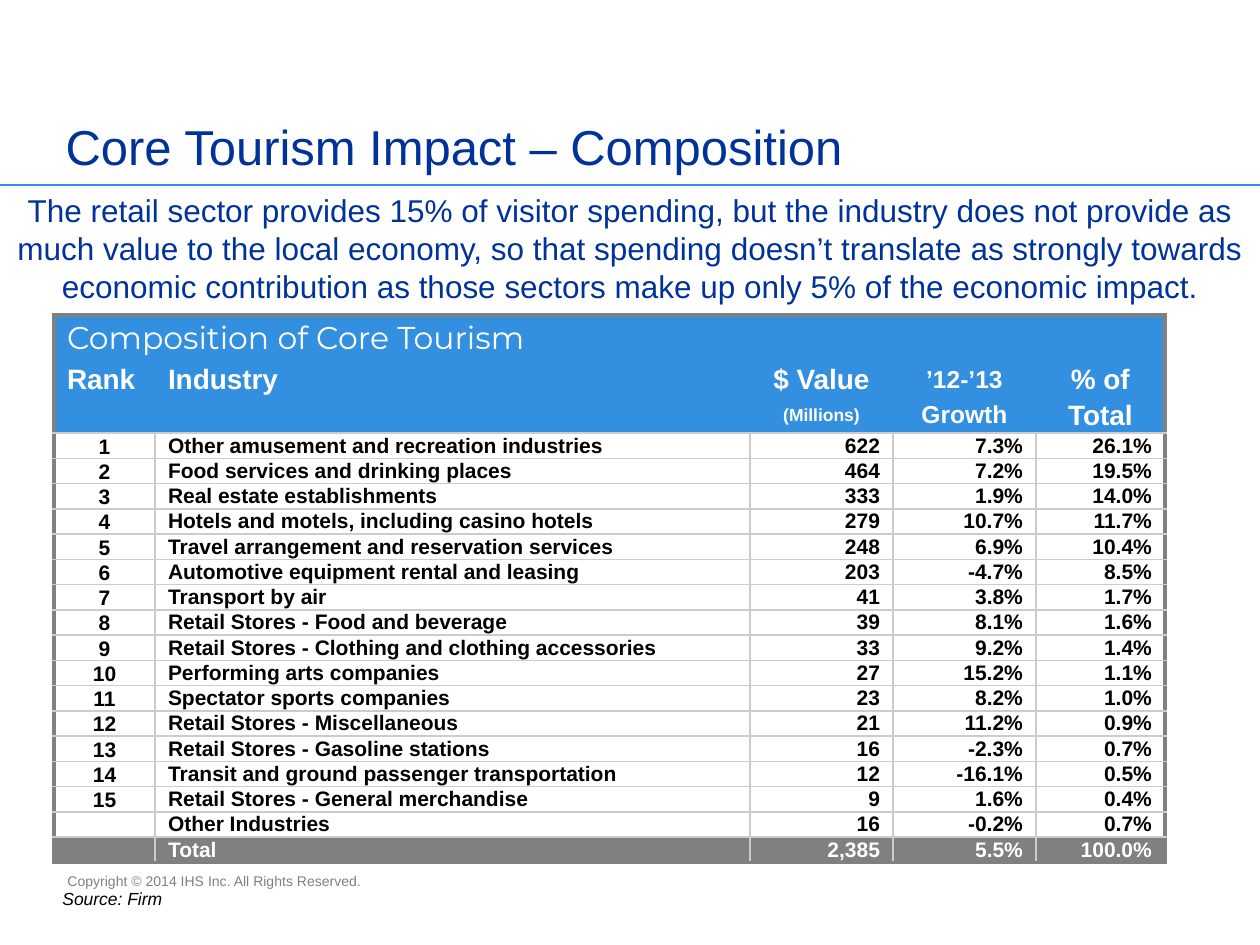
from lxml import etree
from pptx import Presentation
from pptx.dml.color import RGBColor
from pptx.enum.shapes import MSO_CONNECTOR
from pptx.enum.text import MSO_ANCHOR, PP_ALIGN
from pptx.oxml import parse_xml
from pptx.oxml.ns import nsdecls, qn
from pptx.util import Emu, Pt

COLORS = {"navy": "003399", "blue": "3390E1", "gray": "808080",
          "rule": "CCCCCC", "white": "FFFFFF", "black": "000000"}
TITLE = "Core Tourism Impact – Composition"
MESSAGE = ("The retail sector provides 15% of visitor spending, but the industry does not "
           "provide as much value to the local economy, so that spending doesn’t translate "
           "as strongly towards economic contribution as those sectors make up only 5% of "
           "the economic impact.")
COPYRIGHT = "Copyright © 2014 IHS Inc. All Rights Reserved."
SOURCE = "Source: Firm"

HEADER = [
    ("Composition of Core Tourism", "", "", "", ""),
    ("Rank", "Industry", "$ Value", "’12-’13", "% of"),
    ("", "", "(Millions)", "Growth", "Total"),
]
HEADER_SIZES = [(18,) * 5, (16, 16, 16, 14, 16), (10, 10, 10, 14, 16)]
INDUSTRIES = [
    ("Other amusement and recreation industries", "622", "7.3%", "26.1%"),
    ("Food services and drinking places", "464", "7.2%", "19.5%"),
    ("Real estate establishments", "333", "1.9%", "14.0%"),
    ("Hotels and motels, including casino hotels", "279", "10.7%", "11.7%"),
    ("Travel arrangement and reservation services", "248", "6.9%", "10.4%"),
    ("Automotive equipment rental and leasing", "203", "-4.7%", "8.5%"),
    ("Transport by air", "41", "3.8%", "1.7%"),
    ("Retail Stores - Food and beverage", "39", "8.1%", "1.6%"),
    ("Retail Stores - Clothing and clothing accessories", "33", "9.2%", "1.4%"),
    ("Performing arts companies", "27", "15.2%", "1.1%"),
    ("Spectator sports companies", "23", "8.2%", "1.0%"),
    ("Retail Stores - Miscellaneous", "21", "11.2%", "0.9%"),
    ("Retail Stores - Gasoline stations", "16", "-2.3%", "0.7%"),
    ("Transit and ground passenger transportation", "12", "-16.1%", "0.5%"),
    ("Retail Stores - General merchandise", "9", "1.6%", "0.4%"),
]
SUMMARY = [("", "Other Industries", "16", "-0.2%", "0.7%"),
           ("", "Total", "2,385", "5.5%", "100.0%")]
ROWS = HEADER + [(str(rank), *row) for rank, row in enumerate(INDUSTRIES, 1)] + SUMMARY

COLUMN_WIDTHS = [101, 595, 143, 143, 129]
HEADER_HEIGHTS = [47, 34, 34]
BODY_HEIGHT = 25
INSET = 13
LAST_ROW, LAST_COLUMN = len(ROWS) - 1, len(COLUMN_WIDTHS) - 1


def px(length):
    return Emu(round(length * 914400 / 126))


def style(paragraph, size, color, align=PP_ALIGN.LEFT, bold=False, italic=False, name="Arial"):
    paragraph.alignment = align
    font = paragraph.font
    font.name, font.size, font.bold, font.italic = name, Pt(size), bold, italic
    font.color.rgb = RGBColor.from_string(COLORS[color])


def add_text(slide, box, text, size, color, wrap=True, anchor=MSO_ANCHOR.TOP, **options):
    frame = slide.shapes.add_textbox(*map(px, box)).text_frame
    frame.word_wrap = wrap
    frame.vertical_anchor = anchor
    frame.text = text
    style(frame.paragraphs[0], size, color, **options)


def set_borders(cell, row, column):
    """Thick gray outside, none within the header, thin rules elsewhere."""
    in_header = row < len(HEADER)
    sides = {
        "L": (column == 0, in_header),
        "R": (column == LAST_COLUMN or row == 0, in_header),
        "T": (row == 0, in_header),
        "B": (row == LAST_ROW, row < len(HEADER) - 1),
    }
    properties = cell._tc.get_or_add_tcPr()
    for side, (outer, hidden) in sides.items():
        color, width = ("gray", 2.25) if outer else ("rule", 1)
        if hidden and not outer:
            fill = "<a:noFill/>"
        else:
            fill = f'<a:solidFill><a:srgbClr val="{COLORS[color]}"/></a:solidFill>'
        properties.append(parse_xml(
            f'<a:ln{side} {nsdecls("a")} w="{Pt(width)}">{fill}</a:ln{side}>'))


def format_cell(cell, row, column, text):
    in_header, is_total = row < len(HEADER), row == LAST_ROW
    set_borders(cell, row, column)
    cell.fill.solid()
    fill = "blue" if in_header else "gray" if is_total else "white"
    cell.fill.fore_color.rgb = RGBColor.from_string(COLORS[fill])
    cell.vertical_anchor = MSO_ANCHOR.MIDDLE
    cell.margin_top = cell.margin_bottom = px(1 if in_header else 0)
    cell.margin_left = px(INSET if in_header or column == 1 else 0)
    cell.margin_right = px(INSET if in_header or column > 1 else 0)
    if in_header:
        align = PP_ALIGN.CENTER if column > 1 else PP_ALIGN.LEFT
    elif column == 0:
        align = PP_ALIGN.CENTER
        cell.vertical_anchor = MSO_ANCHOR.BOTTOM
    else:
        align = PP_ALIGN.RIGHT if column > 1 else PP_ALIGN.LEFT
    size = HEADER_SIZES[row][column] if in_header else 12
    cell.text = text
    paragraph = cell.text_frame.paragraphs[0]
    style(paragraph, size, "white" if in_header or is_total else "black", align,
          bold=row > 0, name="Montserrat" if row == 0 else "Arial")
    if not text:
        # An empty cell takes its line height from the end-of-paragraph size.
        paragraph._p.get_or_add_endParaRPr().set("sz", str(size * 100))


def add_composition_table(slide):
    heights = HEADER_HEIGHTS + [BODY_HEIGHT] * (len(ROWS) - len(HEADER))
    table = slide.shapes.add_table(len(ROWS), len(COLUMN_WIDTHS), px(54), px(315),
                                   px(sum(COLUMN_WIDTHS)), px(sum(heights))).table
    table.first_row = table.horz_banding = False
    for column, width in zip(table.columns, COLUMN_WIDTHS):
        column.width = px(width)
    for row, height in zip(table.rows, heights):
        row.height = px(height)
    for row, texts in enumerate(ROWS):
        for column, text in enumerate(texts):
            format_cell(table.cell(row, column), row, column, text)
    table.cell(0, 0).merge(table.cell(0, LAST_COLUMN))


def main():
    presentation = Presentation()
    presentation.slide_width, presentation.slide_height = px(1260), px(945)
    slide = presentation.slides.add_slide(presentation.slide_layouts[5])

    rule = slide.shapes.add_connector(MSO_CONNECTOR.STRAIGHT, px(0), px(185), px(1260), px(185))
    rule.line.color.rgb = RGBColor.from_string(COLORS["blue"])
    rule.line.width = Pt(1)
    etree.SubElement(rule._element.spPr, qn("a:effectLst"))

    title = slide.shapes.title
    title.left, title.top, title.width, title.height = map(px, (53, 26, 1037, 156))
    title.text_frame.text = TITLE
    title.text_frame.vertical_anchor = MSO_ANCHOR.BOTTOM
    style(title.text_frame.paragraphs[0], 28, "navy")

    add_text(slide, (0, 190, 1260, 116), MESSAGE, 18, "navy",
             anchor=MSO_ANCHOR.MIDDLE, align=PP_ALIGN.CENTER)
    add_composition_table(slide)
    add_text(slide, (55, 866, 450, 29), COPYRIGHT, 8, "gray")
    add_text(slide, (50, 882, 130, 34), SOURCE, 10, "black", wrap=False, italic=True)
    presentation.save("out.pptx")


if __name__ == "__main__":
    main()
